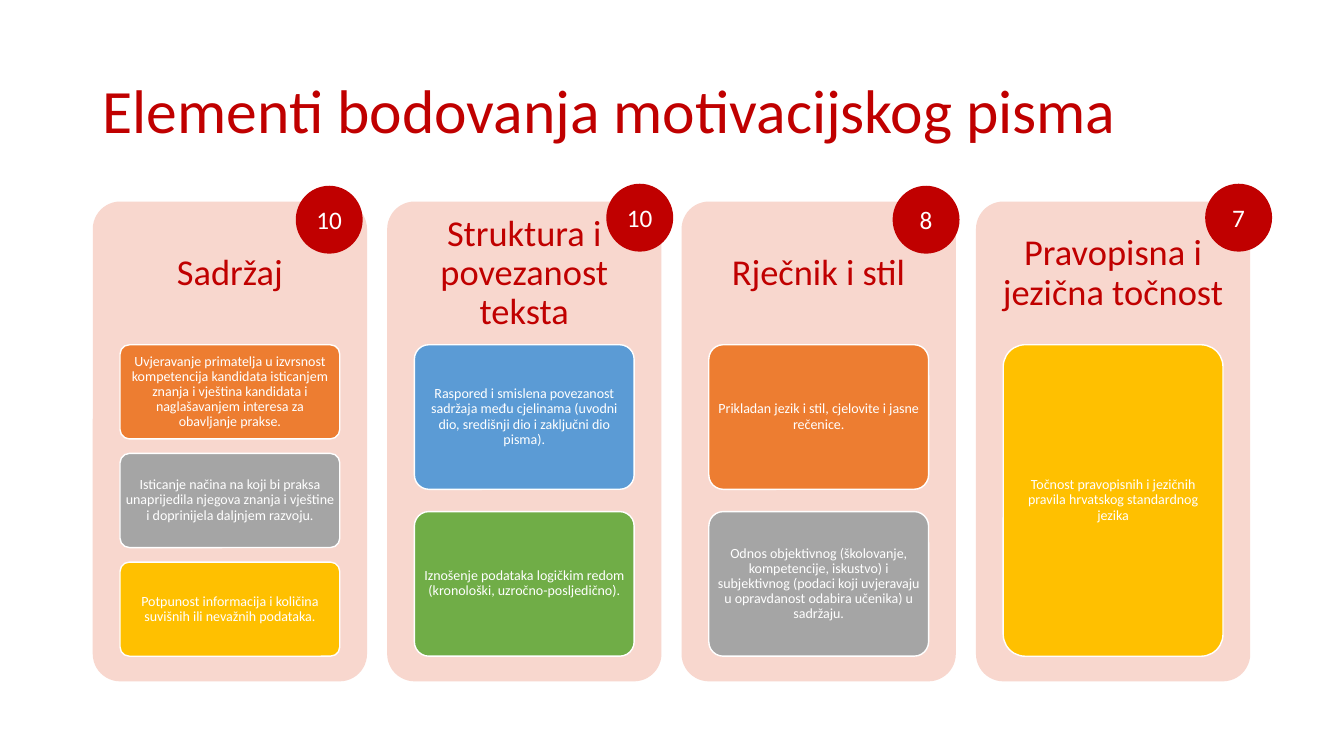
from pptx import Presentation
from pptx.dml.color import RGBColor
from pptx.enum.shapes import MSO_SHAPE
from pptx.enum.text import MSO_ANCHOR, PP_ALIGN
from pptx.util import Inches, Pt

RED = RGBColor(0xC0, 0x00, 0x00)
PINK = RGBColor(0xF8, 0xD7, 0xCE)
WHITE = RGBColor(0xFF, 0xFF, 0xFF)
ORANGE = RGBColor(0xED, 0x7D, 0x31)
GRAY = RGBColor(0xA5, 0xA5, 0xA5)
GOLD = RGBColor(0xFF, 0xC0, 0x00)
BLUE = RGBColor(0x5B, 0x9B, 0xD5)
GREEN = RGBColor(0x70, 0xAD, 0x47)

LEFT, TOP, PITCH = 0.92, 2, 2.92
PANEL_WIDTH, PANEL_HEIGHT, HEADING_HEIGHT = 2.72, 4.76, 1.43
CARD_INDENT, CARD_WIDTH = 0.27, 2.18
CARDS_TOP, CARDS_HEIGHT, GAP_RATIO = 3.42, 3.09, 0.154

CRITERIA = [
    ("Sadržaj", "10", (2.94, 1.85), [
        ("Uvjeravanje primatelja u izvrsnost kompetencija kandidata isticanjem "
         "znanja i vještina kandidata i naglašavanjem interesa za obavljanje prakse.", ORANGE),
        ("Isticanje načina na koji bi praksa unaprijedila njegova znanja i vještine "
         "i doprinijela daljnjem razvoju.", GRAY),
        ("Potpunost informacija i količina suvišnih ili nevažnih podataka.", GOLD),
    ]),
    ("Struktura i povezanost teksta", "10", (6.02, 1.83), [
        ("Raspored i smislena povezanost sadržaja među cjelinama (uvodni dio, "
         "središnji dio i zaključni dio pisma).", BLUE),
        ("Iznošenje podataka logičkim redom (kronološki, uzročno-posljedično).", GREEN),
    ]),
    ("Rječnik i stil", "8", (8.86, 1.85), [
        ("Prikladan jezik i stil, cjelovite i jasne rečenice.", ORANGE),
        ("Odnos objektivnog (školovanje, kompetencije, iskustvo) i subjektivnog "
         "(podaci koji uvjeravaju u opravdanost odabira učenika) u sadržaju.", GRAY),
    ]),
    ("Pravopisna i jezična točnost", "7", (11.96, 1.83), [
        ("Točnost pravopisnih i jezičnih pravila hrvatskog standardnog jezika", GOLD),
    ]),
]


def write(shape, text, size, color=WHITE, align=PP_ALIGN.CENTER, margins=(0, 0), spacing=0.9):
    """Put one formatted paragraph into a shape."""
    frame = shape.text_frame
    frame.word_wrap = True
    frame.vertical_anchor = MSO_ANCHOR.MIDDLE
    frame.margin_left = frame.margin_right = Inches(margins[0])
    frame.margin_top = frame.margin_bottom = Inches(margins[1])
    paragraph = frame.paragraphs[0]
    paragraph.alignment = align
    paragraph.line_spacing = spacing
    run = paragraph.add_run()
    run.text = text
    run.font.name = "Calibri"
    run.font.size = Pt(size)
    run.font.color.rgb = color


class ScoringSlide:
    """Slide with scoring panels, their cards and point badges."""

    def __init__(self, slide):
        self.shapes = slide.shapes

    def label(self, text, box, size, **style):
        """Add red text without a background."""
        label = self.shapes.add_textbox(*map(Inches, box))
        write(label, text, size, RED, **style)

    def figure(self, kind, box, fill, outline=None):
        """Add a filled preset shape."""
        figure = self.shapes.add_shape(kind, *map(Inches, box))
        figure.shadow.inherit = False
        figure.fill.solid()
        figure.fill.fore_color.rgb = fill
        if outline is None:
            figure.line.fill.background()
        else:
            figure.line.color.rgb = outline
            figure.line.width = Pt(1)
        return figure

    def rounded(self, box, fill, outline=None):
        """Add a rounded rectangle with small corners."""
        rounded = self.figure(MSO_SHAPE.ROUNDED_RECTANGLE, box, fill, outline)
        rounded.adjustments[0] = 0.1
        return rounded

    def panel(self, left, heading, cards):
        """Add a panel with its heading and evenly stacked cards."""
        self.rounded((left, TOP, PANEL_WIDTH, PANEL_HEIGHT), PINK)
        self.label(heading, (left, TOP, PANEL_WIDTH, HEADING_HEIGHT), 26, margins=(0.11, 0.11))
        height = CARDS_HEIGHT / (len(cards) + (len(cards) - 1) * GAP_RATIO)
        for row, (text, fill) in enumerate(cards):
            top = CARDS_TOP + row * height * (1 + GAP_RATIO)
            card = self.rounded((left + CARD_INDENT, top, CARD_WIDTH, height), fill, WHITE)
            write(card, text, 10, margins=(0.03, 0.02))

    def badge(self, points, position):
        """Add a circle with the number of points."""
        badge = self.figure(MSO_SHAPE.OVAL, (*position, 0.65, 0.66), RED, RED)
        write(badge, points, 18, spacing=1.0)


def main():
    """Build and save the presentation."""
    presentation = Presentation()
    presentation.slide_width = Inches(13.33)
    presentation.slide_height = Inches(7.5)
    scoring = ScoringSlide(presentation.slides.add_slide(presentation.slide_layouts[6]))
    scoring.label("Elementi bodovanja motivacijskog pisma", (LEFT, 0.4, 11.5, 1.45), 44,
                  align=PP_ALIGN.LEFT, margins=(0.1, 0.05))
    for column, (heading, _, _, cards) in enumerate(CRITERIA):
        scoring.panel(LEFT + column * PITCH, heading, cards)
    for _, points, position, _ in CRITERIA:
        scoring.badge(points, position)
    presentation.save("out.pptx")


if __name__ == "__main__":
    main()
